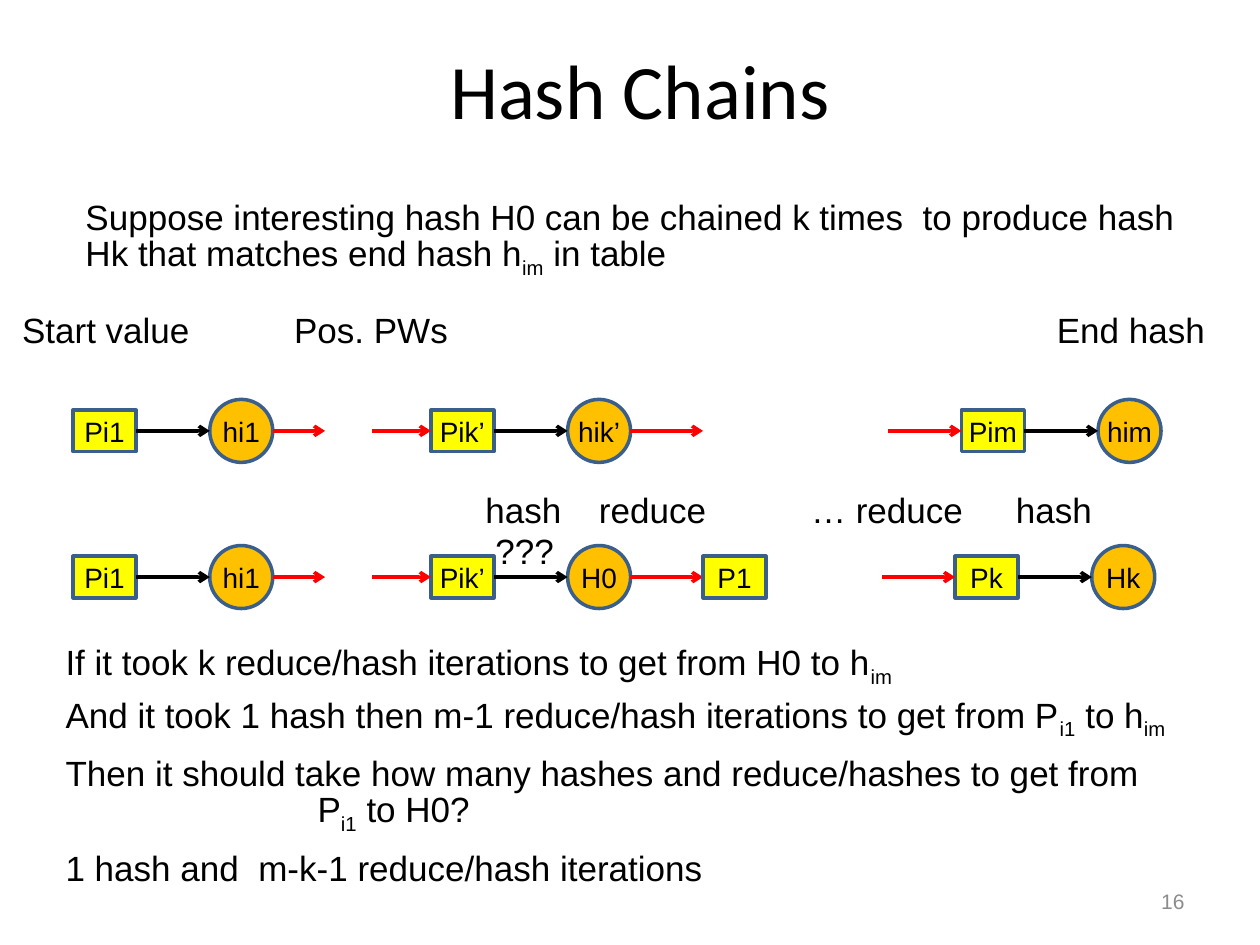
from dataclasses import dataclass

from lxml.etree import SubElement
from pptx import Presentation
from pptx.dml.color import RGBColor
from pptx.enum.shapes import MSO_CONNECTOR, MSO_SHAPE
from pptx.enum.text import MSO_ANCHOR, MSO_AUTO_SIZE, PP_ALIGN
from pptx.oxml.ns import qn
from pptx.util import Inches, Pt


@dataclass(frozen=True)
class Theme:
    """Colours, fonts and sizes of the slide."""

    ink: str = "000000"
    muted: str = "8C8C8C"
    password: str = "FFFF00"
    hashed: str = "FFC000"
    outline: str = "3A5F8C"
    reduce: str = "FF0000"
    title_font: str = "Calibri"
    font: str = "Arial"
    title_size: int = 44
    text_size: int = 20
    node_size: int = 16
    number_size: int = 12
    stroke: int = 2


THEME = Theme()
NODE = 0.5
PASSWORD_HEIGHT = 0.33
HASH_OFFSET = 1.085

TABLE_CHAIN = (
    3.42,
    [(0.58, "Pi1", "hi1"), (3.42, "Pik’", "hik’"), (7.63, "Pim", "him")],
    [(2.17, 2.58), (2.95, 3.42), (5, 5.58), (7.05, 7.63)],
)
SEARCH_CHAIN = (
    4.58,
    [(0.58, "Pi1", "hi1"), (3.42, "Pik’", "H0"), (7.58, "Pk", "Hk")],
    [(2.17, 2.58), (2.95, 3.42), (5, 5.58), (7, 7.58)],
)
LABELS = [
    ("Start value", 0.07, 2.4, 1.54),
    ("Pos. PWs", 2.23, 2.4, 1.43),
    ("End hash", 8.28, 2.4, 1.39),
    ("hash", 3.75, 3.83, 0.81),
    ("reduce", 4.65, 3.83, 1.06),
    ("… reduce", 6.33, 3.83, 1.42),
    ("hash", 7.96, 3.83, 0.81),
    ("???", 3.83, 4.15, 0.67),
]
PREMISE = [
    ["Suppose interesting hash H0 can be chained k times  to produce hash"],
    ["Hk that matches end hash h", "im", " in table"],
]
REASONING = [
    (["If it took k reduce/hash iterations to get from H0 to h", "im"], 0, 0),
    (["And it took 1 hash then m-1 reduce/hash iterations to get from P", "i1", " to h", "im"], 6, 0),
    (["Then it should take how many hashes and reduce/hashes to get from"], 6, 0),
    (["P", "i1", " to H0?"], 0, 2),
    (["1 hash and  m-k-1 reduce/hash iterations"], 6, 0),
]


def rgb(colour):
    """Turn a theme colour into an RGBColor."""
    return RGBColor.from_string(colour)


def add_run(paragraph, text, size, colour=THEME.ink, font=THEME.font):
    """Append one formatted run and return it."""
    run = paragraph.add_run()
    run.text = text
    run.font.size = Pt(size)
    run.font.name = font
    run.font.color.rgb = rgb(colour)
    return run


def add_indexed_runs(paragraph, parts):
    """Append parts that alternate between plain text and subscript."""
    for position, part in enumerate(parts):
        run = add_run(paragraph, part, THEME.text_size)
        if position % 2:
            run.font._element.set("baseline", "-25000")


def place(shape, left, top, width, height):
    """Move and size a shape, in inches."""
    shape.left, shape.top = Inches(left), Inches(top)
    shape.width, shape.height = Inches(width), Inches(height)


def add_title(slide, text):
    """Fill the title placeholder."""
    title = slide.shapes.title
    place(title, 0.33, 0.08, 9.5, 1.25)
    title.text_frame.vertical_anchor = MSO_ANCHOR.MIDDLE
    paragraph = title.text_frame.paragraphs[0]
    paragraph.alignment = PP_ALIGN.CENTER
    add_run(paragraph, text, THEME.title_size, font=THEME.title_font)


def add_label(slide, text, left, top, width):
    """Add a centred caption on one line."""
    label = slide.shapes.add_textbox(Inches(left), Inches(top), Inches(width), Inches(0.44))
    label.text_frame.word_wrap = False
    paragraph = label.text_frame.paragraphs[0]
    paragraph.alignment = PP_ALIGN.CENTER
    add_run(paragraph, text, THEME.text_size)


def add_premise(slide):
    """Add the two lines that state the assumption."""
    premise = slide.shapes.add_textbox(Inches(0.58), Inches(1.5), Inches(8.99), Inches(0.77))
    frame = premise.text_frame
    frame.word_wrap = True
    for position, parts in enumerate(PREMISE):
        paragraph = frame.add_paragraph() if position else frame.paragraphs[0]
        paragraph.line_spacing = Pt(24)
        add_indexed_runs(paragraph, parts)


def add_reasoning(slide):
    """Fill the body placeholder with the argument, without bullets."""
    body = slide.placeholders[1]
    place(body, 0.42, 5.08, 9.3, 2.03)
    frame = body.text_frame
    frame.word_wrap = True
    frame.auto_size = MSO_AUTO_SIZE.NONE
    for position, (parts, gap, indent) in enumerate(REASONING):
        paragraph = frame.add_paragraph() if position else frame.paragraphs[0]
        paragraph.line_spacing = Pt(24)
        paragraph.space_before = Pt(gap)
        properties = paragraph._p.get_or_add_pPr()
        properties.set("marL", str(Inches(indent)))
        properties.set("indent", "0")
        SubElement(properties, qn("a:buNone"))
        add_indexed_runs(paragraph, parts)


def add_node(slide, kind, text, left, middle, height, fill):
    """Add a chain node centred on the height of its chain."""
    node = slide.shapes.add_shape(
        kind, Inches(left), Inches(middle - height / 2), Inches(NODE), Inches(height)
    )
    node.shadow.inherit = False
    node.fill.solid()
    node.fill.fore_color.rgb = rgb(fill)
    node.line.color.rgb = rgb(THEME.outline)
    node.line.width = Pt(THEME.stroke)
    frame = node.text_frame
    frame.word_wrap = False
    frame.margin_left = frame.margin_right = 0
    frame.vertical_anchor = MSO_ANCHOR.MIDDLE
    paragraph = frame.paragraphs[0]
    paragraph.alignment = PP_ALIGN.CENTER
    add_run(paragraph, text, THEME.node_size)


def add_password(slide, text, left, middle):
    """Add a password box."""
    add_node(slide, MSO_SHAPE.RECTANGLE, text, left, middle, PASSWORD_HEIGHT, THEME.password)


def add_arrow(slide, start, end, middle, colour):
    """Add a horizontal arrow pointing right."""
    arrow = slide.shapes.add_connector(
        MSO_CONNECTOR.STRAIGHT, Inches(start), Inches(middle), Inches(end), Inches(middle)
    )
    arrow.line.color.rgb = rgb(colour)
    arrow.line.width = Pt(THEME.stroke)
    SubElement(arrow.line._get_or_add_ln(), qn("a:tailEnd"), type="arrow")
    SubElement(arrow._element.spPr, qn("a:effectLst"))


def add_chain(slide, middle, links, reductions):
    """Add password and hash pairs with their hash and reduce arrows."""
    for left, password, hashed in links:
        hash_left = left + HASH_OFFSET
        add_password(slide, password, left, middle)
        add_node(slide, MSO_SHAPE.OVAL, hashed, hash_left, middle, NODE, THEME.hashed)
        add_arrow(slide, left + NODE, hash_left, middle, THEME.ink)
    for start, end in reductions:
        add_arrow(slide, start, end, middle, THEME.reduce)


def add_page_number(slide, number):
    """Add the page number at the lower right."""
    page = slide.shapes.add_textbox(Inches(7.17), Inches(6.95), Inches(2.33), Inches(0.4))
    page.text_frame.word_wrap = True
    page.text_frame.vertical_anchor = MSO_ANCHOR.MIDDLE
    paragraph = page.text_frame.paragraphs[0]
    paragraph.alignment = PP_ALIGN.RIGHT
    add_run(paragraph, number, THEME.number_size, THEME.muted)


def main():
    """Build the slide and save it."""
    deck = Presentation()
    deck.slide_width, deck.slide_height = Inches(10), Inches(7.5)
    slide = deck.slides.add_slide(deck.slide_layouts[1])
    add_title(slide, "Hash Chains")
    add_premise(slide)
    for chain in (TABLE_CHAIN, SEARCH_CHAIN):
        add_chain(slide, *chain)
    add_password(slide, "P1", 5.58, SEARCH_CHAIN[0])
    for label in LABELS:
        add_label(slide, *label)
    add_reasoning(slide)
    add_page_number(slide, "16")
    deck.save("out.pptx")


if __name__ == "__main__":
    main()
